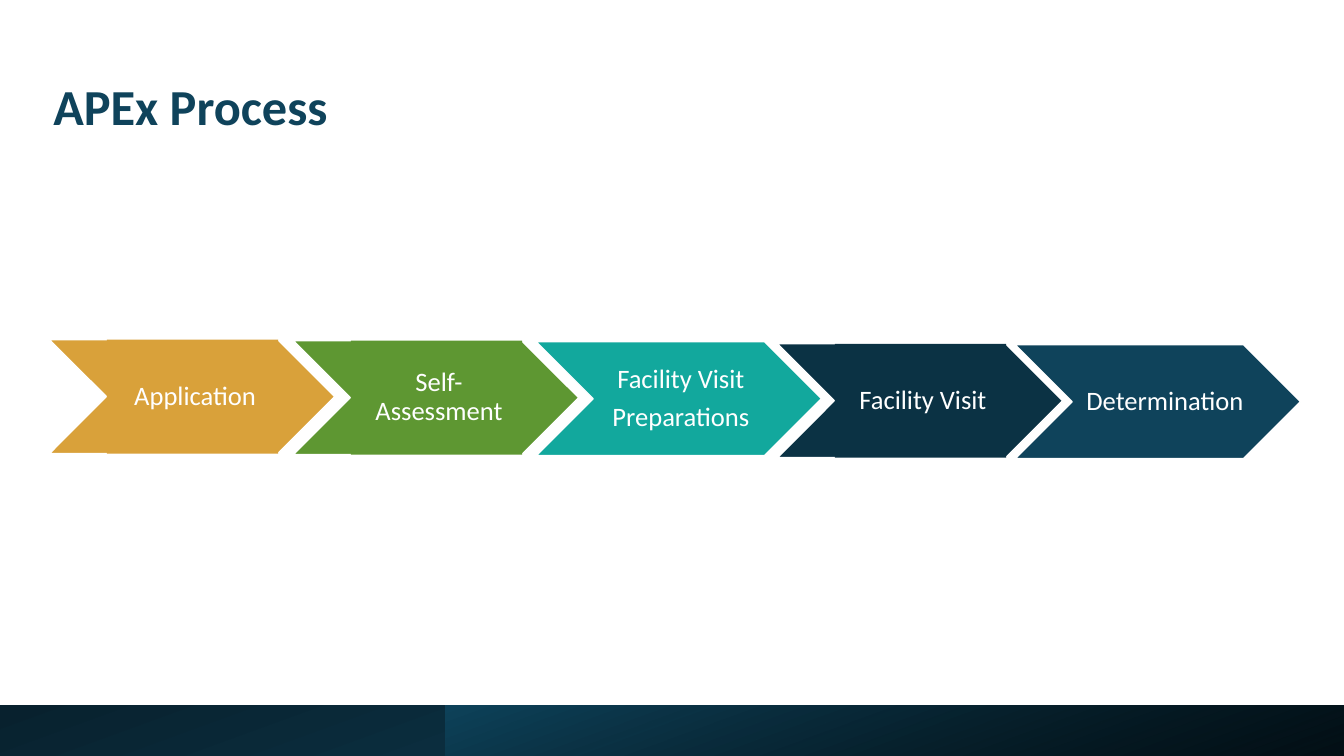
"""Build the APEx Process slide: a title, five chevron stages and a footer band."""
import pptx
import pptx.dml.color
import pptx.enum.shapes
import pptx.enum.text
import pptx.util
from lxml import etree

RGBColor = pptx.dml.color.RGBColor
MSO_SHAPE = pptx.enum.shapes.MSO_SHAPE
PP_ALIGN = pptx.enum.text.PP_ALIGN
Pt, Inches = pptx.util.Pt, pptx.util.Inches

WHITE = RGBColor(0xFF, 0xFF, 0xFF)
BLACK = RGBColor(0x00, 0x00, 0x00)
NAVY = RGBColor(0x0F, 0x43, 0x5B)
DEEP = RGBColor(0x0B, 0x32, 0x44)
NIGHT = RGBColor(0x08, 0x21, 0x2E)
GOLD = RGBColor(0xD9, 0xA1, 0x3A)
GREEN = RGBColor(0x5E, 0x97, 0x32)
TEAL = RGBColor(0x12, 0xA8, 0x9D)

prs = pptx.Presentation()
prs.slide_width, prs.slide_height = Inches(13.33), Inches(7.5)
COL, ROW = prs.slide_width / 100, prs.slide_height / 100
s = prs.slides.add_slide(prs.slide_layouts[6])


def place(left, top, width, height):
    """Turn percent columns and rows into slide lengths."""
    return int(left * COL), int(top * ROW), int(width * COL), int(height * ROW)


def write(sp, lines, align, space, font):
    """Fill a shape with paragraphs in one font format."""
    tf = sp.text_frame
    tf.word_wrap = True
    tf.vertical_anchor = pptx.enum.text.MSO_ANCHOR.MIDDLE
    for i, line in enumerate(lines):
        p = tf.paragraphs[0] if i == 0 else tf.add_paragraph()
        p.alignment, p.line_spacing = align, 0.9
        if i < len(lines) - 1:
            p.space_after = space
        r = p.add_run()
        r.text = line
        r.font.color.rgb = font["color"]
        for name in ("name", "size", "bold"):
            setattr(r.font, name, font[name])
    return tf


bands = [
    (0, 100, 180, 250, (NIGHT, NAVY)[::-1], None),
    (33.17, 66.83, 0, 70, (BLACK, NAVY), "76000"),
]
for left, width, rotation, angle, colors, alpha in bands:
    sp = s.shapes.add_shape(MSO_SHAPE.RECTANGLE, *place(left, 93.33, width, 6.67))
    sp.shadow.inherit = False
    sp.line.fill.background()
    sp.rotation = rotation
    xfrm = sp._element.spPr.find(pptx.oxml.ns.qn("a:xfrm"))
    xfrm.set("flipH", "1")
    sp.fill.gradient()
    sp.fill.gradient_angle = angle
    for stop, color in zip(sp.fill.gradient_stops, colors):
        stop.color.rgb = color
    if alpha:
        first = next(sp._element.spPr.iter(pptx.oxml.ns.qn("a:srgbClr")))
        etree.SubElement(first, pptx.oxml.ns.qn("a:alpha")).set("val", alpha)

title_font = {"name": "Calibri", "size": Pt(36), "bold": True, "color": NAVY}
title = s.shapes.add_textbox(*place(3.23, 4.8, 86.26, 19.33))
write(title, ["APEx Process"], PP_ALIGN.LEFT, Pt(0), title_font)

stage_font = {"name": "Calibri", "size": Pt(19), "bold": False, "color": WHITE}
insets = {"margin_left": 0.08, "margin_top": 0.03, "margin_right": 0.03, "margin_bottom": 0.03}
stages = [
    (3.68, 44.93, 4.27, GOLD, True, ["Application"]),
    (21.83, 45.07, 4.27, GREEN, True, ["Self-Assessment"]),
    (39.9, 45.2, 4.2, TEAL, False, ["Facility Visit", "Preparations"]),
    (57.84, 45.47, 4.27, DEEP, True, ["Facility Visit"]),
    (75.54, 45.6, 4.57, NAVY, False, ["Determination"]),
]
for left, top, indent, color, filled, lines in stages:
    group = s.shapes.add_group_shape()
    chevron = group.shapes.add_shape(MSO_SHAPE.CHEVRON, *place(left, top, 21.23, 15.07))
    chevron.shadow.inherit = False
    chevron.fill.solid()
    chevron.fill.fore_color.rgb = color
    chevron.line.color.rgb = WHITE
    chevron.line.width = Pt(1)

    label = group.shapes.add_textbox(*place(left + indent, top, 12.75, 15.07))
    if filled:
        label.fill.solid()
        label.fill.fore_color.rgb = color
    tf = write(label, lines, PP_ALIGN.CENTER, Pt(6.65), stage_font)
    for side, inset in insets.items():
        setattr(tf, side, Inches(inset))

prs.save("out.pptx")
